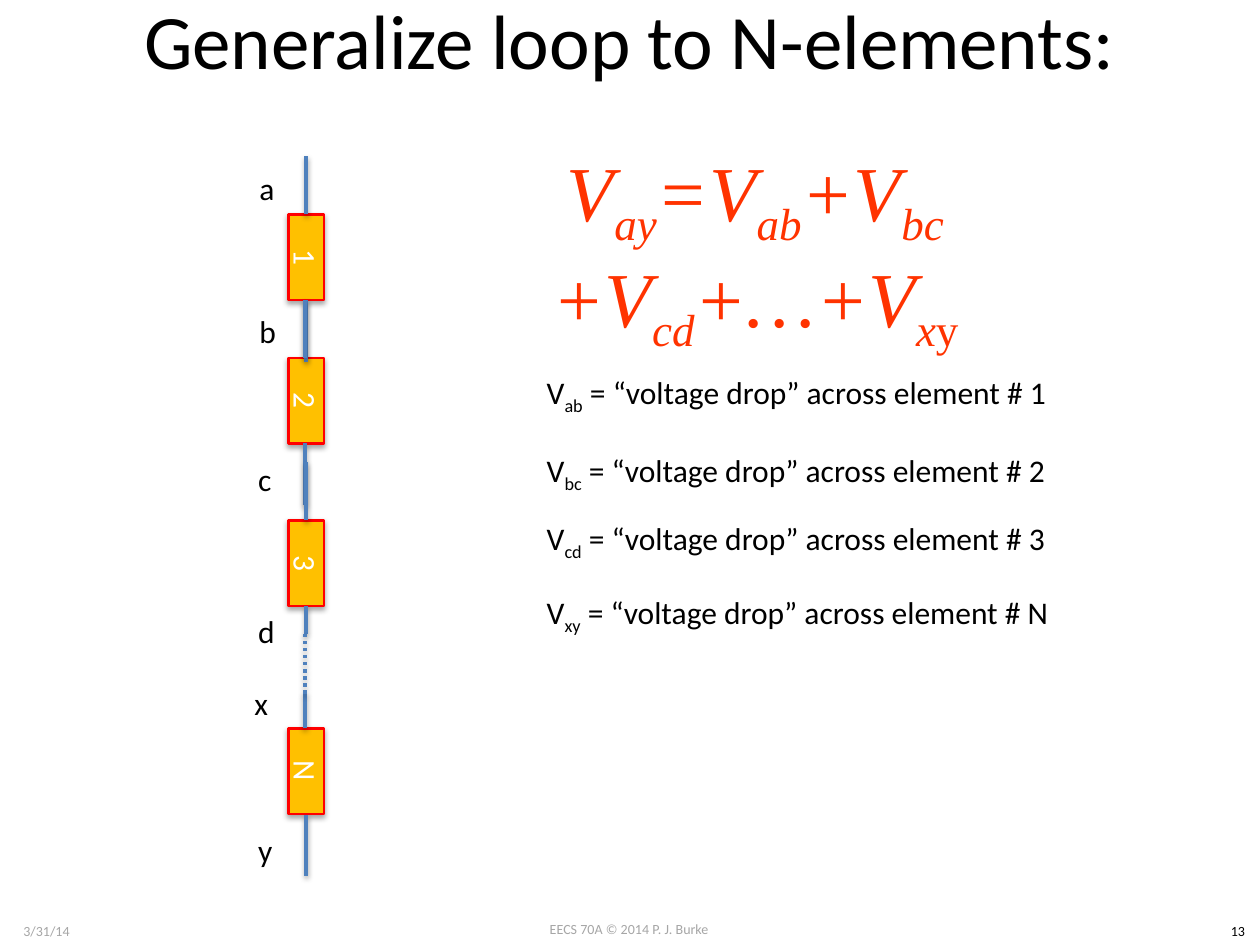
from dataclasses import dataclass

from lxml.etree import SubElement
from pptx import Presentation
from pptx.dml.color import RGBColor
from pptx.enum.dml import MSO_LINE
from pptx.enum.shapes import MSO_CONNECTOR, MSO_SHAPE
from pptx.enum.text import MSO_ANCHOR, PP_ALIGN
from pptx.oxml.ns import qn
from pptx.util import Emu, Pt

PX = 9144  # EMU in one px, at 100 px to the inch


def px(length):
    return Emu(length * PX)


@dataclass(frozen=True)
class Theme:
    ink: str = "000000"
    muted: str = "A6A6A6"
    paper: str = "FFFFFF"
    formula: str = "FF3300"
    element: str = "FFC000"
    border: str = "FF0000"
    wire: str = "4F81BD"
    body_font: str = "Calibri"
    formula_font: str = "Times New Roman"
    title_size: float = 44
    formula_size: float = 44.4
    body_size: float = 18
    footer_size: float = 8


def color(name):
    return RGBColor.from_string(name)


def add_span(para, text, *, size, ink, font, italic=False, subscript=False):
    span = para.add_run()
    span.text = text
    span.font.size = Pt(size)
    span.font.name = font
    span.font.italic = italic
    span.font.color.rgb = color(ink)
    if subscript:
        span.font._element.set("baseline", "-25000")


def write(para, text, **style):
    """Write text in which every second part between bars is a subscript."""
    for index, part in enumerate(text.split("|")):
        if part:
            add_span(para, part, subscript=index % 2 == 1, **style)


def add_shadow(shape, *, alpha, blur, distance):
    effects = SubElement(shape._element.spPr, qn("a:effectLst"))
    shadow = SubElement(effects, qn("a:outerShdw"), blurRad=str(Pt(blur)),
                        dist=str(Pt(distance)), dir="5400000", rotWithShape="0")
    tint = SubElement(shadow, qn("a:srgbClr"), val="000000")
    SubElement(tint, qn("a:alpha"), val=str(alpha * 1000))


class Painter:
    def __init__(self, page, theme):
        self.page = page
        self.theme = theme

    def text(self, text, left, top, width, height, *, size=None, ink=None, font=None,
             italic=False, align=PP_ALIGN.LEFT, anchor=MSO_ANCHOR.TOP, wrap=True):
        box = self.page.shapes.add_textbox(px(left), px(top), px(width), px(height))
        frame = box.text_frame
        frame.word_wrap = wrap
        frame.vertical_anchor = anchor
        para = frame.paragraphs[0]
        para.alignment = align
        write(para, text, size=size or self.theme.body_size, ink=ink or self.theme.ink,
              font=font or self.theme.body_font, italic=italic)
        return para

    def footer(self, text, left, top, width, ink):
        self.text(text, left, top, width, 24, size=self.theme.footer_size,
                  ink=ink, align=PP_ALIGN.CENTER)

    def element(self, label, center_x, center_y):
        """Draw a circuit element turned a quarter, with its label."""
        width, height = 68, 28
        box = self.page.shapes.add_shape(
            MSO_SHAPE.RECTANGLE, px(center_x - width // 2), px(center_y - height // 2),
            px(width), px(height))
        box.rotation = 90
        box.fill.solid()
        box.fill.fore_color.rgb = color(self.theme.element)
        box.line.color.rgb = color(self.theme.border)
        box.line.width = Pt(1.5)
        add_shadow(box, alpha=35, blur=3.1, distance=1.8)
        box.text_frame.vertical_anchor = MSO_ANCHOR.MIDDLE
        para = box.text_frame.paragraphs[0]
        para.alignment = PP_ALIGN.CENTER
        write(para, label, size=self.theme.body_size, ink=self.theme.paper,
              font=self.theme.body_font)

    def wire(self, x, top, bottom, dash=None):
        line = self.page.shapes.add_connector(
            MSO_CONNECTOR.STRAIGHT, px(x), px(top), px(x), px(bottom))
        line.line.color.rgb = color(self.theme.wire)
        line.line.width = Pt(2)
        if dash:
            line.line.dash_style = dash
        add_shadow(line, alpha=38, blur=3.1, distance=1.6)


def main():
    deck = Presentation()
    deck.slide_width, deck.slide_height = px(1000), px(750)
    theme = Theme()
    painter = Painter(deck.slides.add_slide(deck.slide_layouts[6]), theme)

    painter.footer("EECS 70A © 2014 P. J. Burke", 383, 726, 233, theme.muted)
    painter.footer("3/31/14", 0, 727, 74, theme.muted)
    painter.footer("13", 965, 727, 35, theme.ink)
    painter.text("Generalize loop to N-elements:", 50, -32, 900, 125,
                 size=theme.title_size, align=PP_ALIGN.CENTER, anchor=MSO_ANCHOR.MIDDLE)

    for label, center_y in (("1", 204), ("2", 318), ("3", 447), ("N", 612)):
        painter.element(label, 243, center_y)
    for x, top, bottom in ((243, 124, 170), (243, 238, 287), (242, 238, 284),
                           (242, 352, 401), (243, 367, 413), (243, 481, 503),
                           (242, 551, 578), (243, 647, 695)):
        painter.wire(x, top, bottom)
    painter.wire(242, 503, 551, dash=MSO_LINE.ROUND_DOT)

    for node, left, top in (("a", 196, 129), ("b", 196, 243), ("c", 195, 360),
                            ("d", 195, 481), ("x", 192, 538), ("y", 195, 655)):
        painter.text(node, left, top, 32, 40, wrap=False)

    style = dict(size=theme.formula_size, ink=theme.formula, font=theme.formula_font)
    formula = painter.text("V|ay|=V|ab|+V|bc|+V|cd|+…+V|x", 425, 117, 349, 162,
                           italic=True, align=PP_ALIGN.CENTER,
                           anchor=MSO_ANCHOR.MIDDLE, **style)
    add_span(formula, "y", subscript=True, **style)

    for nodes, label, top in (("ab", "1", 291), ("bc", "2", 353),
                              ("cd", "3", 407), ("xy", "N", 466)):
        painter.text(f"V|{nodes}| = “voltage drop” across element # {label}",
                     424, top, 422, 40, wrap=False)

    deck.save("out.pptx")


if __name__ == "__main__":
    main()
